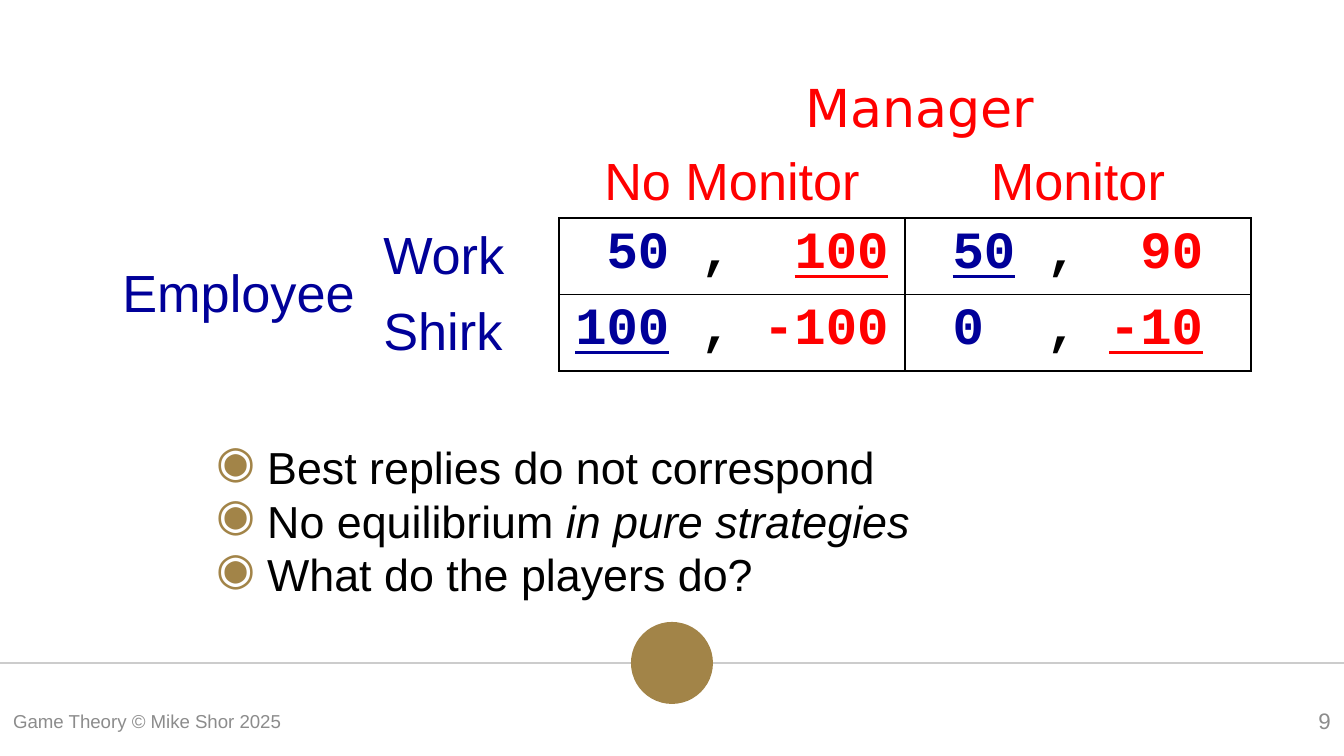
from lxml import etree
from pptx import Presentation
from pptx.dml.color import RGBColor
from pptx.enum.shapes import MSO_CONNECTOR, MSO_SHAPE
from pptx.enum.text import MSO_ANCHOR, PP_ALIGN
from pptx.oxml.ns import qn
from pptx.util import Pt

LEFT, CENTER, RIGHT = PP_ALIGN.LEFT, PP_ALIGN.CENTER, PP_ALIGN.RIGHT
TOP, MIDDLE, BOTTOM = MSO_ANCHOR.TOP, MSO_ANCHOR.MIDDLE, MSO_ANCHOR.BOTTOM
STRAIGHT, OVAL = MSO_CONNECTOR.STRAIGHT, MSO_SHAPE.OVAL

EMU_PER_PX = 914400 / 134.4
WIDTH, HEIGHT = 1344, 756
RED, NAVY, BLACK = "FF0000", "000099", "000000"
GOLD, GREY, RULE = "A28448", "8C8C8C", "CCCCCC"
BODY, MONO, TITLE = "Arial", "Courier New", "DejaVu Sans"
GAME_SIZE = 28
PLAIN_TABLE_STYLE = "{2D5ABB26-0587-4C30-8999-92F81FD0307C}"

COLUMN_WIDTHS = (261, 189, 346, 346)
ROW_HEIGHT = 76
STRATEGIES = ("Work", "Shirk")
RESPONSES = ("No Monitor", "Monitor")
# Employee payoff, separator, manager payoff, and which payoffs are best replies
PAYOFFS = (
    ((" 50", " ,  ", "100", (False, True)), ("50", " ,  ", "90", (True, False))),
    (("100", " , ", "-100", (True, False)), ("0", "  , ", "-10", (False, True))),
)
CONCLUSIONS = (
    ("Best replies do not correspond", ""),
    ("No equilibrium ", "in pure strategies"),
    ("What do the players do?", ""),
)


def px(length):
    return round(length * EMU_PER_PX)


def rgb(hex_color):
    return RGBColor.from_string(hex_color)


def add_span(paragraph, text, color, size, font=BODY, **styles):
    """Append a run; styles are font flags such as bold or underline."""
    run = paragraph.add_run()
    run.text = text
    run.font.name, run.font.size = font, Pt(size)
    run.font.color.rgb = rgb(color)
    for flag, value in styles.items():
        setattr(run.font, flag, value)


def add_text_frame(slide, left, top, width, height, anchor=TOP):
    box = slide.shapes.add_textbox(px(left), px(top), px(width), px(height))
    frame = box.text_frame
    frame.word_wrap = True
    frame.vertical_anchor = anchor
    return frame


def add_label(slide, bounds, text, color, size, align, anchor=MIDDLE, font=BODY):
    paragraph = add_text_frame(slide, *bounds, anchor).paragraphs[0]
    paragraph.alignment = align
    add_span(paragraph, text, color, size, font)


def add_footer_rule(slide, y, diameter):
    """Draw the full-width line with the disc centred on it."""
    rule = slide.shapes.add_connector(STRAIGHT, 0, px(y), px(WIDTH), px(y))
    rule.line.color.rgb = rgb(RULE)
    rule.line.width = Pt(0.75)
    etree.SubElement(rule.element.spPr, qn("a:effectLst"))

    left, top = (WIDTH - diameter) / 2, y - diameter / 2
    disc = slide.shapes.add_shape(OVAL, px(left), px(top), px(diameter), px(diameter))
    disc.shadow.inherit = False
    disc.fill.solid()
    disc.fill.fore_color.rgb = rgb(GOLD)
    disc.line.fill.background()


def add_borders(cell):
    properties = cell._tc.get_or_add_tcPr()
    for side in ("lnL", "lnR", "lnT", "lnB"):
        border = etree.SubElement(properties, qn(f"a:{side}"), w=str(Pt(1)))
        fill = etree.SubElement(border, qn("a:solidFill"))
        etree.SubElement(fill, qn("a:srgbClr"), val=BLACK)


def fill_heading(cell, text, color, align, anchor):
    cell.vertical_anchor = anchor
    paragraph = cell.text_frame.paragraphs[0]
    paragraph.alignment = align
    add_span(paragraph, text, color, GAME_SIZE)


def fill_payoffs(cell, employee, separator, manager, best_replies):
    add_borders(cell)
    paragraph = cell.text_frame.paragraphs[0]
    paragraph.alignment = CENTER
    parts = (
        (employee, NAVY, best_replies[0]),
        (separator, BLACK, False),
        (manager, RED, best_replies[1]),
    )
    for text, color, underline in parts:
        add_span(paragraph, text, color, GAME_SIZE, MONO, bold=True, underline=underline)


def add_game(slide, left, top):
    rows, columns = len(STRATEGIES) + 1, len(COLUMN_WIDTHS)
    frame = slide.shapes.add_table(
        rows, columns, px(left), px(top), px(sum(COLUMN_WIDTHS)), px(ROW_HEIGHT * rows)
    )
    game = frame.table
    game.first_row = game.horz_banding = False
    game._tbl.tblPr.find(qn("a:tableStyleId")).text = PLAIN_TABLE_STYLE
    for column, width in zip(game.columns, COLUMN_WIDTHS):
        column.width = px(width)
    for row in game.rows:
        row.height = px(ROW_HEIGHT)

    game.cell(1, 0).merge(game.cell(rows - 1, 0))
    fill_heading(game.cell(1, 0), "Employee", NAVY, LEFT, MIDDLE)
    for column, response in enumerate(RESPONSES, 2):
        fill_heading(game.cell(0, column), response, RED, CENTER, BOTTOM)
    for row, (strategy, outcomes) in enumerate(zip(STRATEGIES, PAYOFFS), 1):
        fill_heading(game.cell(row, 1), strategy, NAVY, LEFT, MIDDLE)
        for column, outcome in enumerate(outcomes, 2):
            fill_payoffs(game.cell(row, column), *outcome)
    for cell in game.iter_cells():
        cell.fill.background()


def add_bullet(paragraph, indent):
    properties = paragraph._p.get_or_add_pPr()
    properties.set("marL", str(px(indent)))
    properties.set("indent", str(-px(indent)))
    color = etree.SubElement(properties, qn("a:buClr"))
    etree.SubElement(color, qn("a:srgbClr"), val=GOLD)
    etree.SubElement(properties, qn("a:buChar"), char="◉")


def add_conclusions(slide, bounds):
    frame = add_text_frame(slide, *bounds)
    for index, (statement, emphasis) in enumerate(CONCLUSIONS):
        paragraph = frame.add_paragraph() if index else frame.paragraphs[0]
        add_bullet(paragraph, 51)
        add_span(paragraph, statement, BLACK, 24)
        if emphasis:
            add_span(paragraph, emphasis, BLACK, 24, italic=True)


def main():
    presentation = Presentation()
    presentation.slide_width, presentation.slide_height = px(WIDTH), px(HEIGHT)
    slide = presentation.slides.add_slide(presentation.slide_layouts[6])

    add_footer_rule(slide, 663, 82)
    add_label(slide, (1042, 701, 302, 40), "9", GREY, 12, RIGHT)
    add_label(slide, (0, 701, 454, 40), "Game Theory © Mike Shor 2025", GREY, 10, LEFT)
    add_label(slide, (736, 69, 367, 77), "Manager", RED, GAME_SIZE, CENTER, TOP, TITLE)
    add_game(slide, 109, 142)
    add_conclusions(slide, (203, 433, 1001, 207))

    presentation.save("out.pptx")


if __name__ == "__main__":
    main()
